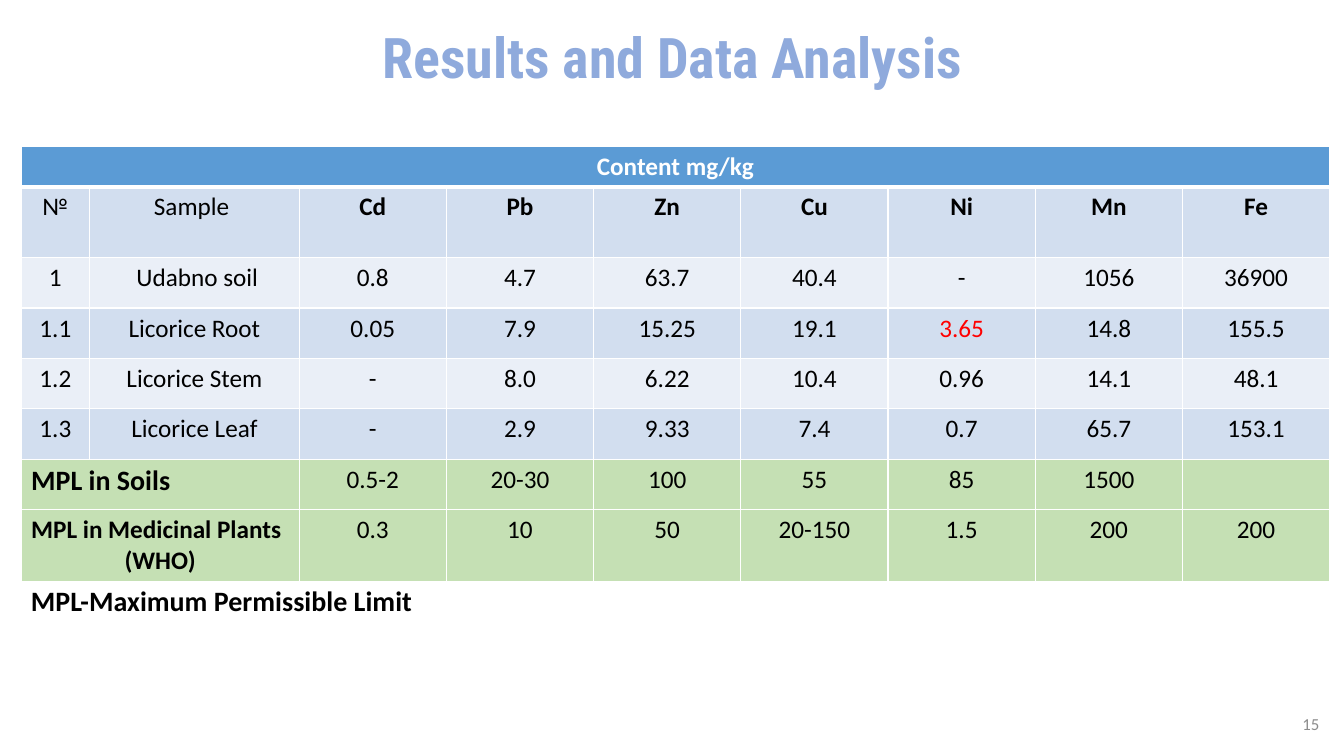
from dataclasses import dataclass

from lxml.etree import SubElement
from pptx import Presentation
from pptx.dml.color import RGBColor as Rgb
from pptx.enum.text import MSO_ANCHOR as Anchor, MSO_AUTO_SIZE as AutoSize, PP_ALIGN as Align
from pptx.oxml.ns import qn
from pptx.util import Cm, Pt


@dataclass(frozen=True)
class Theme:
    """Colours, fonts and type sizes of the slide."""
    heading_font: str = "Roboto Condensed"
    body_font: str = "Calibri"
    heading: str = "8FAADC"
    ink: str = "000000"
    white: str = "FFFFFF"
    alert: str = "FF0000"
    muted: str = "8C8C8C"
    header: str = "5B9BD5"
    dark_band: str = "D2DEEF"
    light_band: str = "EAEFF7"
    limit_band: str = "C5E0B4"
    heading_size: int = 40
    note_size: int = 20
    cell_size: int = 18
    number_size: int = 12
    thin: int = 1
    thick: int = 3


THEME = Theme()
COLUMN_WIDTHS = [1.73, 5.28] + [3.71] * 7
ROW_HEIGHTS = [1.02, 1.78] + [1.27] * 5 + [1.8]
BANDS = ([THEME.header] + [THEME.dark_band, THEME.light_band] * 2
         + [THEME.dark_band] + [THEME.limit_band] * 2)
CONTENT = [
    ["Content mg/kg"] + [""] * 8,
    ["№", "Sample ", "Cd", "Pb", "Zn", "Cu", "Ni", "Mn", "Fe"],
    ["1", " Udabno soil", "0.8", "4.7", "63.7", "40.4", "-", "1056", "36900"],
    ["1.1", "Licorice Root", "0.05", "7.9", "15.25", "19.1", "3.65", "14.8", "155.5"],
    ["1.2", "Licorice Stem", "-", "8.0", "6.22", "10.4", "0.96", "14.1", "48.1"],
    ["1.3", "Licorice Leaf", "-", "2.9", "9.33", "7.4", "0.7", "65.7", "153.1"],
    ["MPL in Soils", "", "0.5-2", "20-30", "100", "55", "85", "1500", ""],
    ["MPL in Medicinal Plants\n(WHO)", "", "0.3", "10", "50", "20-150", "1.5", "200", "200"],
]
HEADER_ROW, ELEMENT_ROW, SOIL_LIMIT_ROW, PLANT_LIMIT_ROW = 0, 1, 6, 7
HIGH_NICKEL = (3, 6)


def style(paragraph, size, color=THEME.ink, bold=False, align=Align.LEFT, font=THEME.body_font):
    """Set the type and alignment of one paragraph."""
    paragraph.alignment = align
    paragraph.font.name = font
    paragraph.font.size = Pt(size)
    paragraph.font.bold = bold
    paragraph.font.color.rgb = Rgb.from_string(color)


def add_title(slide, wording):
    """Place the heading across the top of the slide."""
    title = slide.shapes.title
    title.left, title.top, title.width, title.height = Cm(0), Cm(0), Cm(33.87), Cm(2.41)
    frame = title.text_frame
    frame.text = wording
    frame.auto_size = AutoSize.NONE
    frame.vertical_anchor = Anchor.BOTTOM
    heading = frame.paragraphs[0]
    heading.line_spacing = 0.9
    style(heading, THEME.heading_size, THEME.heading, True, Align.CENTER, THEME.heading_font)


def add_label(slide, wording, box, anchor=Anchor.TOP, **look):
    """Add one line of text in a box given in centimetres."""
    frame = slide.shapes.add_textbox(*map(Cm, box)).text_frame
    frame.word_wrap = True
    frame.vertical_anchor = anchor
    frame.text = wording
    style(frame.paragraphs[0], **look)


def draw_borders(cell, row):
    """Rule a cell in white, heavier between the header and the body."""
    heavy_edges = {HEADER_ROW: "lnB", ELEMENT_ROW: "lnT"}
    for edge in ("lnL", "lnR", "lnT", "lnB"):
        weight = THEME.thick if heavy_edges.get(row) == edge else THEME.thin
        line = SubElement(cell._tc.get_or_add_tcPr(), qn(f"a:{edge}"), w=str(Pt(weight)))
        SubElement(SubElement(line, qn("a:solidFill")), qn("a:srgbClr"), val=THEME.white)


def cell_look(row, column):
    """Return the type settings for a table position."""
    limit_name = row >= SOIL_LIMIT_ROW and column == 0
    color = THEME.white if row == HEADER_ROW else THEME.ink
    return {
        "size": THEME.note_size if limit_name and row == SOIL_LIMIT_ROW else THEME.cell_size,
        "color": THEME.alert if (row, column) == HIGH_NICKEL else color,
        "bold": limit_name or row == HEADER_ROW or (row == ELEMENT_ROW and column > 1),
        "align": Align.LEFT if limit_name else Align.CENTER,
    }


def fill_cell(cell, wording, row, column):
    """Write, rule and colour one table cell."""
    draw_borders(cell, row)
    cell.fill.solid()
    cell.fill.fore_color.rgb = Rgb.from_string(BANDS[row])
    cell.text = wording
    for paragraph in cell.text_frame.paragraphs:
        style(paragraph, **cell_look(row, column))


def add_metal_table(slide):
    """Add the table of metal contents and permissible limits."""
    frame = slide.shapes.add_table(len(ROW_HEIGHTS), len(COLUMN_WIDTHS), Cm(0.53), Cm(3.68),
                                   Cm(sum(COLUMN_WIDTHS)), Cm(sum(ROW_HEIGHTS)))
    table = frame.table
    for column, width in zip(table.columns, COLUMN_WIDTHS):
        column.width = Cm(width)
    for row, height in zip(table.rows, ROW_HEIGHTS):
        row.height = Cm(height)
    for row, wordings in enumerate(CONTENT):
        for column, wording in enumerate(wordings):
            fill_cell(table.cell(row, column), wording, row, column)
    for row, last in ((HEADER_ROW, 8), (SOIL_LIMIT_ROW, 1), (PLANT_LIMIT_ROW, 1)):
        table.cell(row, 0).merge(table.cell(row, last))
    table.cell(PLANT_LIMIT_ROW, 0).text_frame.paragraphs[1].alignment = Align.CENTER


def main():
    """Build and save the results slide."""
    deck = Presentation()
    deck.slide_width, deck.slide_height = Cm(33.87), Cm(19.05)
    slide = deck.slides.add_slide(deck.slide_layouts.get_by_name("Title Only"))
    add_title(slide, "Results and Data Analysis")
    add_metal_table(slide)
    add_label(slide, "MPL-Maximum Permissible Limit", (0.53, 14.58, 14.68, 1.11),
              size=THEME.note_size, bold=True)
    add_label(slide, "15", (25.88, 17.73, 7.62, 1.01), Anchor.MIDDLE,
              size=THEME.number_size, color=THEME.muted, align=Align.RIGHT)
    deck.save("out.pptx")


if __name__ == "__main__":
    main()
